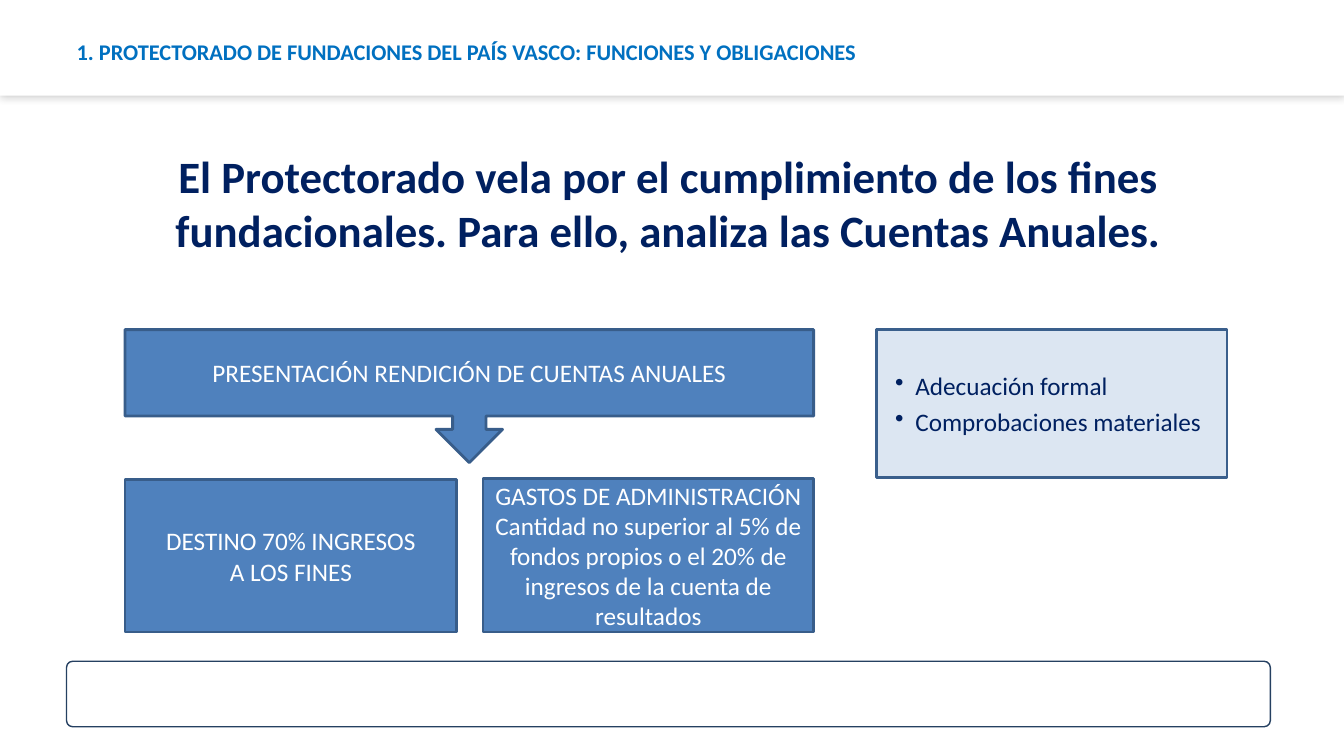
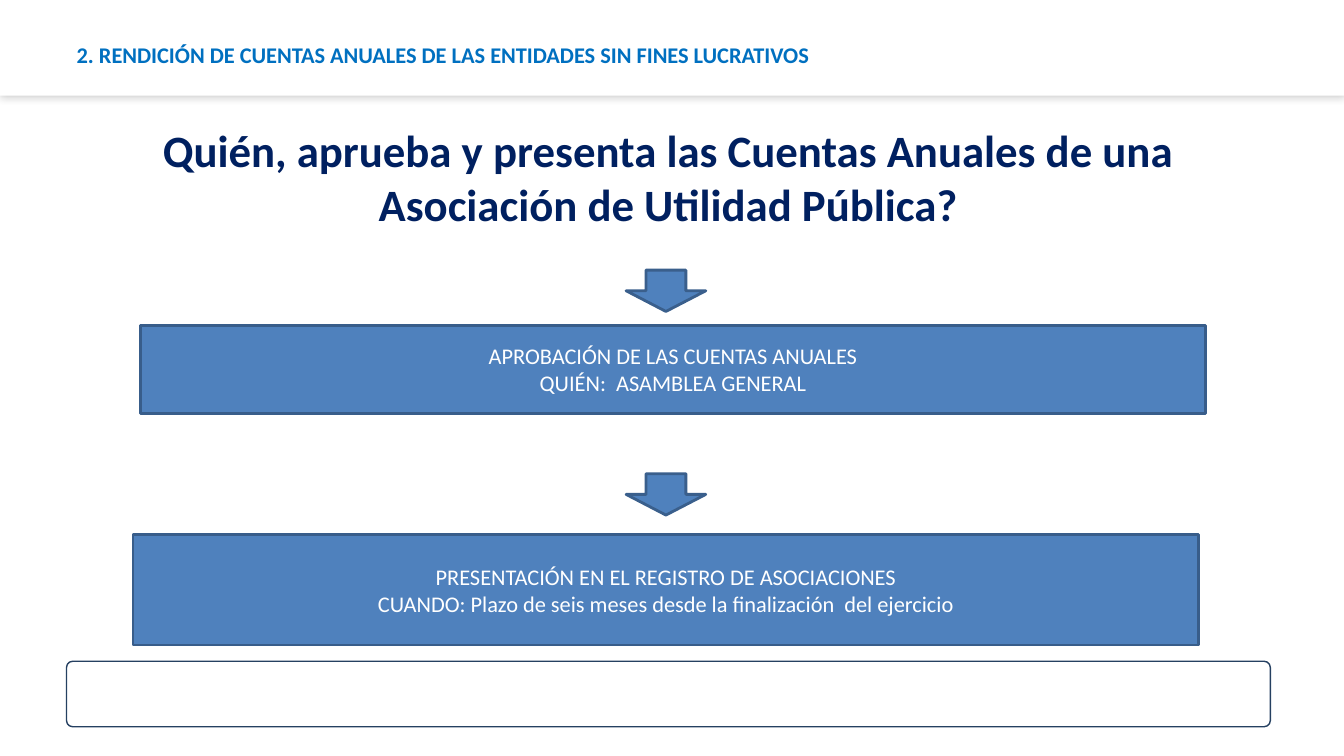
from lxml.etree import SubElement
from pptx import Presentation
from pptx.dml.color import RGBColor
from pptx.enum.shapes import MSO_SHAPE
from pptx.enum.text import MSO_ANCHOR, MSO_AUTO_SIZE, PP_ALIGN
from pptx.oxml.ns import qn
from pptx.util import Inches, Pt

hue = RGBColor.from_string
WHITE, NAVY, SKY = "FFFFFF", "002060", "0070C0"
BLUE, EDGE, PALE, STEEL = "4F81BD", "385D8A", "DCE6F2", "3A5F8C"
RECT, ARROW = MSO_SHAPE.RECTANGLE, MSO_SHAPE.DOWN_ARROW


def draw(slide, kind, spot, fill, edge=None, width=2):
    shape = slide.shapes.add_shape(kind, *map(Inches, spot))
    shape.shadow.inherit = False
    shape.fill.solid()
    shape.fill.fore_color.rgb = hue(fill)
    if edge:
        shape.line.color.rgb = hue(edge)
        shape.line.width = Pt(width)
    else:
        shape.line.fill.background()
    return shape


def write(shape, lines, size, ink, align=PP_ALIGN.CENTER, anchor=MSO_ANCHOR.MIDDLE, bold=False, mark=None):
    frame = shape.text_frame
    frame.text = "\n".join(lines)
    look = {"word_wrap": True, "auto_size": MSO_AUTO_SIZE.NONE, "vertical_anchor": anchor}
    for key, value in look.items():
        setattr(frame, key, value)
    style = {"name": "Calibri", "size": Pt(size), "bold": bold}
    for index, para in enumerate(frame.paragraphs):
        para.alignment = align
        if mark:
            para.space_before = Pt(4 if index else 0)
            props = para._p.get_or_add_pPr()
            props.set("marL", str(Inches(0.29)))
            props.set("indent", str(Inches(-0.2)))
            SubElement(props, qn("a:buChar")).set("char", mark)
        for key, value in style.items():
            setattr(para.font, key, value)
        para.font.color.rgb = hue(ink)


pages = [
    {
        "title": "1. PROTECTORADO DE FUNDACIONES DEL PAÍS VASCO: FUNCIONES Y OBLIGACIONES",
        "top": 0.15,
        "head": "El Protectorado vela por el cumplimiento de los fines fundacionales. "
                "Para ello, analiza las Cuentas Anuales.",
        "drop": 1.43,
        "size": 18,
        "boxes": [
            (MSO_SHAPE.DOWN_ARROW_CALLOUT, (1.24, 3.27, 6.83, 1.32),
             ["PRESENTACIÓN RENDICIÓN DE CUENTAS ANUALES"]),
            (RECT, (1.24, 4.76, 3.29, 1.51), ["DESTINO 70% INGRESOS", "A LOS FINES"]),
            (RECT, (4.79, 4.75, 3.28, 1.52),
             ["GASTOS DE ADMINISTRACIÓN",
              "Cantidad no superior al 5% de fondos propios o el 20% de ingresos de la cuenta de resultados"]),
        ],
        "arrows": [],
        "points": ["Adecuación formal", "Comprobaciones materiales"],
    },
    {
        "title": "2. RENDICIÓN DE CUENTAS ANUALES DE LAS ENTIDADES SIN FINES LUCRATIVOS",
        "top": 0.18,
        "head": "Quién, aprueba y presenta las Cuentas Anuales de una Asociación de Utilidad Pública?",
        "drop": 1.17,
        "size": 16,
        "boxes": [
            (RECT, (1.39, 3.23, 10.57, 0.87),
             ["APROBACIÓN DE LAS CUENTAS ANUALES", "QUIÉN:  ASAMBLEA GENERAL"]),
            (RECT, (1.32, 5.3, 10.57, 1.1),
             ["PRESENTACIÓN EN EL REGISTRO DE ASOCIACIONES",
              "CUANDO: Plazo de seis meses desde la finalización  del ejercicio"]),
        ],
        "arrows": [2.68, 4.7],
        "points": [],
    },
]

deck = Presentation()
deck.slide_width, deck.slide_height = Inches(13.33), Inches(7.5)
layout = deck.slide_layouts[5]
slides = [deck.slides.add_slide(layout) for page in pages]

foot = draw(slides[0], MSO_SHAPE.ROUNDED_RECTANGLE, (0.66, 6.56, 11.94, 0.65), WHITE, "254061", 1)
foot.adjustments[0] = 0.096
band = draw(slides[0], RECT, (0, 0, 13.33, 0.95), WHITE)
glow = SubElement(band.element.spPr.find(qn("a:effectLst")), qn("a:outerShdw"))
for key, value in {"blurRad": Pt(6), "dist": 0, "dir": 225 * 60000}.items():
    glow.set(key, str(value))
tint = SubElement(glow, qn("a:srgbClr"))
tint.set("val", "000000")
SubElement(tint, qn("a:alpha")).set("val", "20000")
for place, shape in enumerate((foot, band), 2):
    layout.shapes.element.insert(place, shape.element)

for slide, page in zip(slides, pages):
    title = slide.shapes.title
    spot = {"left": 0.69, "top": page["top"], "width": 11.98, "height": 0.72}
    for key, value in spot.items():
        setattr(title, key, Inches(value))
    pads = {"margin_left": 0.07, "margin_top": 0.04, "margin_right": 0.07, "margin_bottom": 0.04}
    for key, value in pads.items():
        setattr(title.text_frame, key, Inches(value))
    write(title, [page["title"]], 16, SKY, PP_ALIGN.LEFT, bold=True)

    head = slide.shapes.add_textbox(*map(Inches, (1.09, page["drop"], 11.08, 1.18)))
    write(head, [page["head"]], 32, NAVY, anchor=MSO_ANCHOR.TOP, bold=True)

    for kind, spot, lines in page["boxes"]:
        write(draw(slide, kind, spot, BLUE, EDGE), lines, page["size"], WHITE)
    for top in page["arrows"]:
        draw(slide, ARROW, (6.21, top, 0.79, 0.41), BLUE, STEEL)
    if page["points"]:
        panel = draw(slide, RECT, (8.69, 3.27, 3.48, 1.47), PALE, STEEL)
        write(panel, page["points"], 18, NAVY, PP_ALIGN.LEFT, mark="•")

deck.save("out.pptx")
